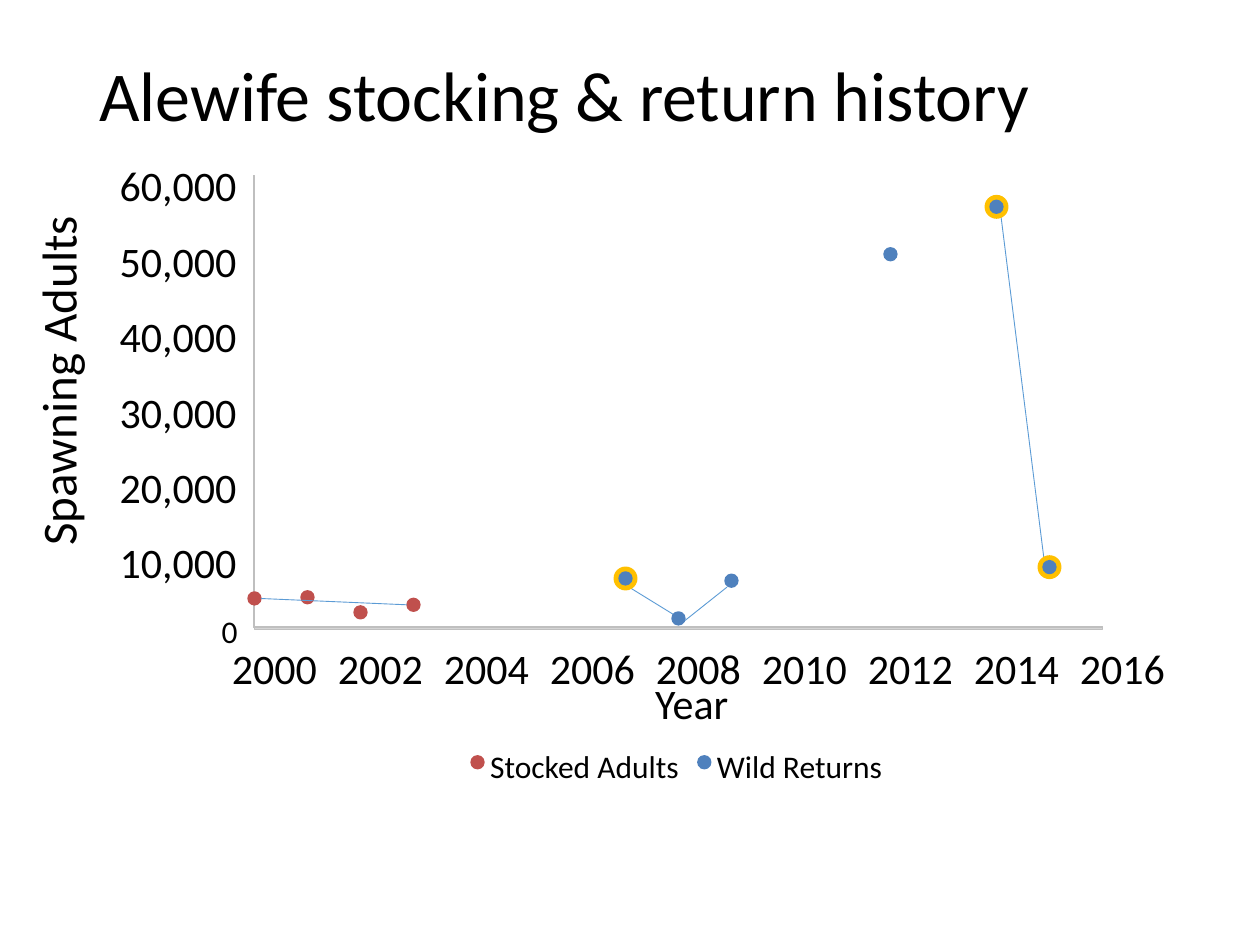
import dataclasses

import pptx
import pptx.dml.color
import pptx.enum.shapes
import pptx.enum.text
import pptx.oxml
import pptx.util

Inches = pptx.util.Inches
Pt = pptx.util.Pt
SHAPE = pptx.enum.shapes.MSO_SHAPE
ANCHOR = pptx.enum.text.MSO_ANCHOR
FIT = pptx.enum.text.MSO_AUTO_SIZE


@dataclasses.dataclass(frozen=True)
class Theme:
    font: str = "Calibri"
    ink: str = "000000"
    axis: str = "BFBFBF"
    stocked: str = "C0504D"
    wild: str = "4F81BD"
    halo: str = "FFC000"
    trend: str = "5B9BD5"
    title: int = 40
    name: int = 28
    tick: int = 24
    small: int = 18


@dataclasses.dataclass(frozen=True)
class Box:
    left: float
    top: float
    width: float
    height: float


THEME = Theme()
DOT, HALO = 0.1, 0.19
START, END, PEAK = 2000, 2016, 60000
STOCKED = {2000: 3850, 2001: 4000, 2002: 2000, 2003: 3000}
WILD = {2007: 6500, 2008: 1200, 2009: 6200, 2012: 49500, 2014: 55800, 2015: 8000}
MARKED = (2007, 2014, 2015)


def color(code):
    return pptx.dml.color.RGBColor.from_string(code)


def add_text(slide, box, text, size, wrap=False):
    shape = slide.shapes.add_textbox(
        Inches(box.left), Inches(box.top), Inches(box.width), Inches(box.height))
    frame = shape.text_frame
    frame.margin_left = frame.margin_right = 0
    frame.margin_top = frame.margin_bottom = 0
    frame.word_wrap = wrap
    frame.auto_size = FIT.SHAPE_TO_FIT_TEXT
    frame.text = text
    font = frame.paragraphs[0].runs[0].font
    font.name, font.size = THEME.font, Pt(size)
    font.color.rgb = color(THEME.ink)
    return shape


def add_form(slide, kind, box, fill=None, line=None, width=1):
    shape = slide.shapes.add_shape(
        kind, Inches(box.left), Inches(box.top), Inches(box.width), Inches(box.height))
    shape.shadow.inherit = False
    if fill:
        shape.fill.solid()
        shape.fill.fore_color.rgb = color(fill)
    else:
        shape.fill.background()
    if line:
        shape.line.color.rgb = color(line)
        shape.line.width = Pt(width)
    else:
        shape.line.fill.background()


def add_disc(slide, x, y, size, fill=None, line=None):
    box = Box(x - size / 2, y - size / 2, size, size)
    add_form(slide, SHAPE.OVAL, box, fill, line)


def add_dot(slide, x, y, tint):
    add_disc(slide, x, y, DOT, fill=tint)
    add_disc(slide, x, y, DOT, line=tint)


def add_trend(slide, box, x1, y1, x2, y2):
    line = slide.shapes.add_connector(
        pptx.enum.shapes.MSO_CONNECTOR.STRAIGHT,
        Inches(box.left + x1), Inches(box.top + y1),
        Inches(box.left + x2), Inches(box.top + y2))
    line.line.color.rgb = color(THEME.trend)
    line.line.width = Pt(0.5)
    props = line._element.spPr
    props.append(pptx.oxml.parse_xml(
        '<a:effectLst xmlns:a="http://schemas.openxmlformats.org/drawingml/2006/main"/>'))


def draw_title(slide, box):
    shape = add_text(slide, box, "Alewife stocking & return history", THEME.title, True)
    frame = shape.text_frame
    frame.auto_size = FIT.NONE
    frame.margin_left = frame.margin_right = Inches(0.1)
    frame.vertical_anchor = ANCHOR.MIDDLE
    frame.paragraphs[0].line_spacing = 0.9


def draw_axes(slide, box):
    # Axis rules
    rules = (Box(box.left - 0.01, box.top, 0.01, box.height),
             Box(box.left, box.top + box.height - 0.01, box.width, 0.02))
    for rule in rules:
        add_form(slide, SHAPE.RECTANGLE, rule, THEME.axis, THEME.axis, 0.13)

    # Count labels
    base = box.top + box.height
    add_text(slide, Box(box.left - 0.26, base - 0.12, 0.13, 0.3), "0", THEME.small)
    for count in range(10000, PEAK + 1, 10000):
        top = base - box.height * count / PEAK - 0.12
        add_text(slide, Box(box.left - 1.07, top, 0.93, 0.4), f"{count:,}", THEME.tick)

    # Year labels
    step = box.width / (END - START)
    for year in range(START, END + 1, 2):
        left = box.left - 0.18 + step * (year - START)
        add_text(slide, Box(left, base + 0.12, 0.68, 0.4), str(year), THEME.tick)

    # Axis names
    name = add_text(slide, Box(box.left - 2.95, box.top + 1.32, 2.77, 0.47),
                    "Spawning Adults", THEME.name, True)
    name.rotation = 270
    add_text(slide, Box(box.left + 3.18, base + 0.4, 0.89, 0.4), "Year", THEME.tick)


def draw_plot(slide, box):
    def spot(year, count):
        return (box.left + box.width * (year - START) / (END - START),
                box.top + box.height * (1 - count / PEAK))

    # Lines and halos behind the wild returns
    for ends in ((5.92, 0.29, 6.27, 3.08), (2.94, 3.25, 3.33, 3.49),
                 (3.41, 3.54, 3.75, 3.27)):
        add_trend(slide, box, *ends)
    for year in MARKED:
        add_disc(slide, *spot(year, WILD[year]), HALO, fill=THEME.halo)

    draw_axes(slide, box)

    # Data points
    for series, tint in ((STOCKED, THEME.stocked), (WILD, THEME.wild)):
        for year, count in series.items():
            add_dot(slide, *spot(year, count), tint)

    # Line across the stocked years
    add_trend(slide, box, 0.05, 3.36, 1.21, 3.41)


def draw_legend(slide, box):
    entries = (("Stocked Adults", THEME.stocked, 0, 1.51),
               ("Wild Returns", THEME.wild, 1.8, 1.32))
    for text, tint, shift, width in entries:
        left = box.left + shift
        add_dot(slide, left + DOT / 2, box.top + 0.12, tint)
        add_text(slide, Box(left + 0.15, box.top, width, box.height), text, THEME.small)


def main():
    deck = pptx.Presentation()
    deck.slide_width, deck.slide_height = Inches(10), Inches(7.5)
    slide = deck.slides.add_slide(deck.slide_layouts[6])
    draw_title(slide, Box(0.69, 0.4, 8.62, 0.77))
    draw_plot(slide, Box(2.02, 1.39, 6.73, 3.59))
    draw_legend(slide, Box(3.74, 5.93, 3.27, 0.3))
    deck.save("out.pptx")


if __name__ == "__main__":
    main()
